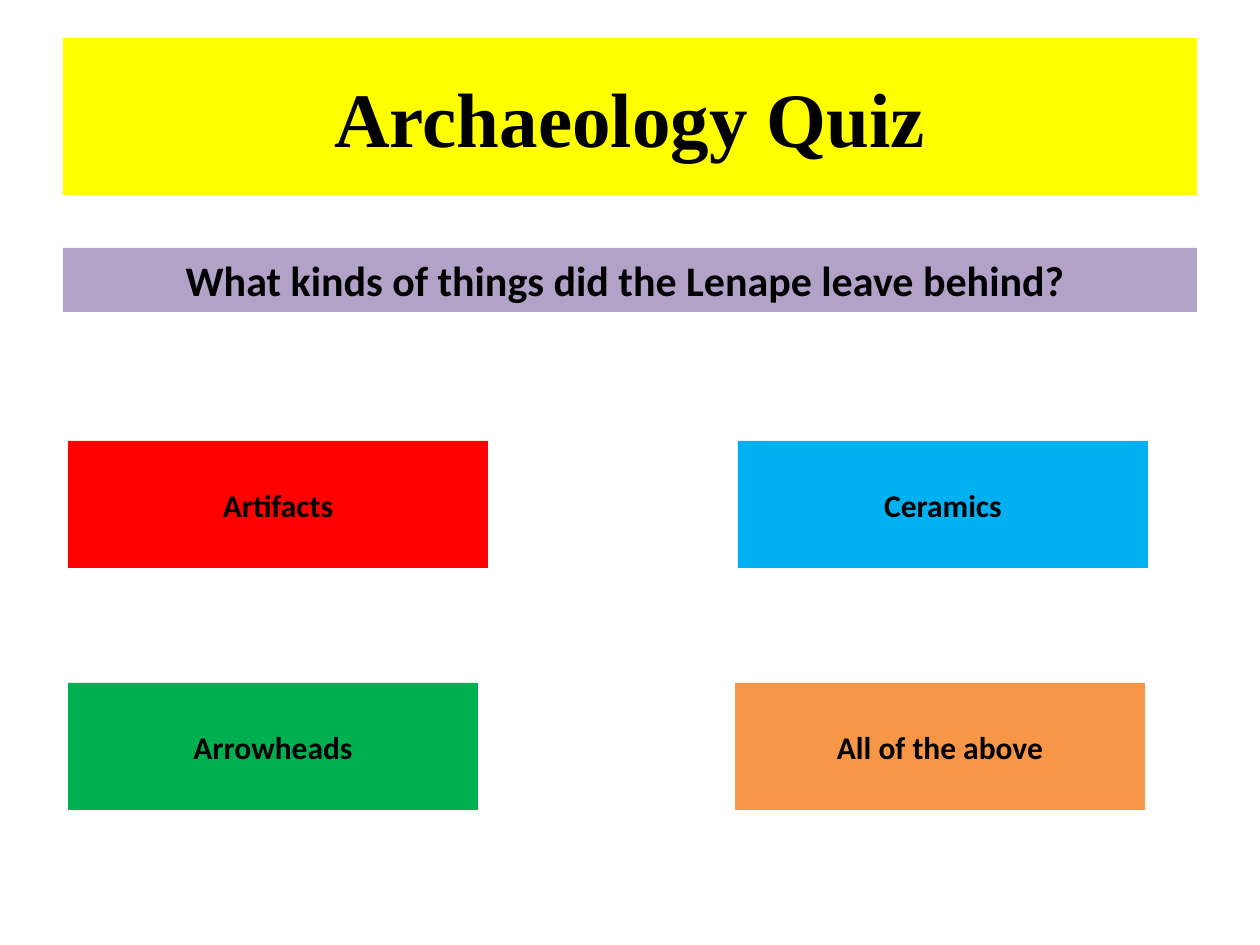
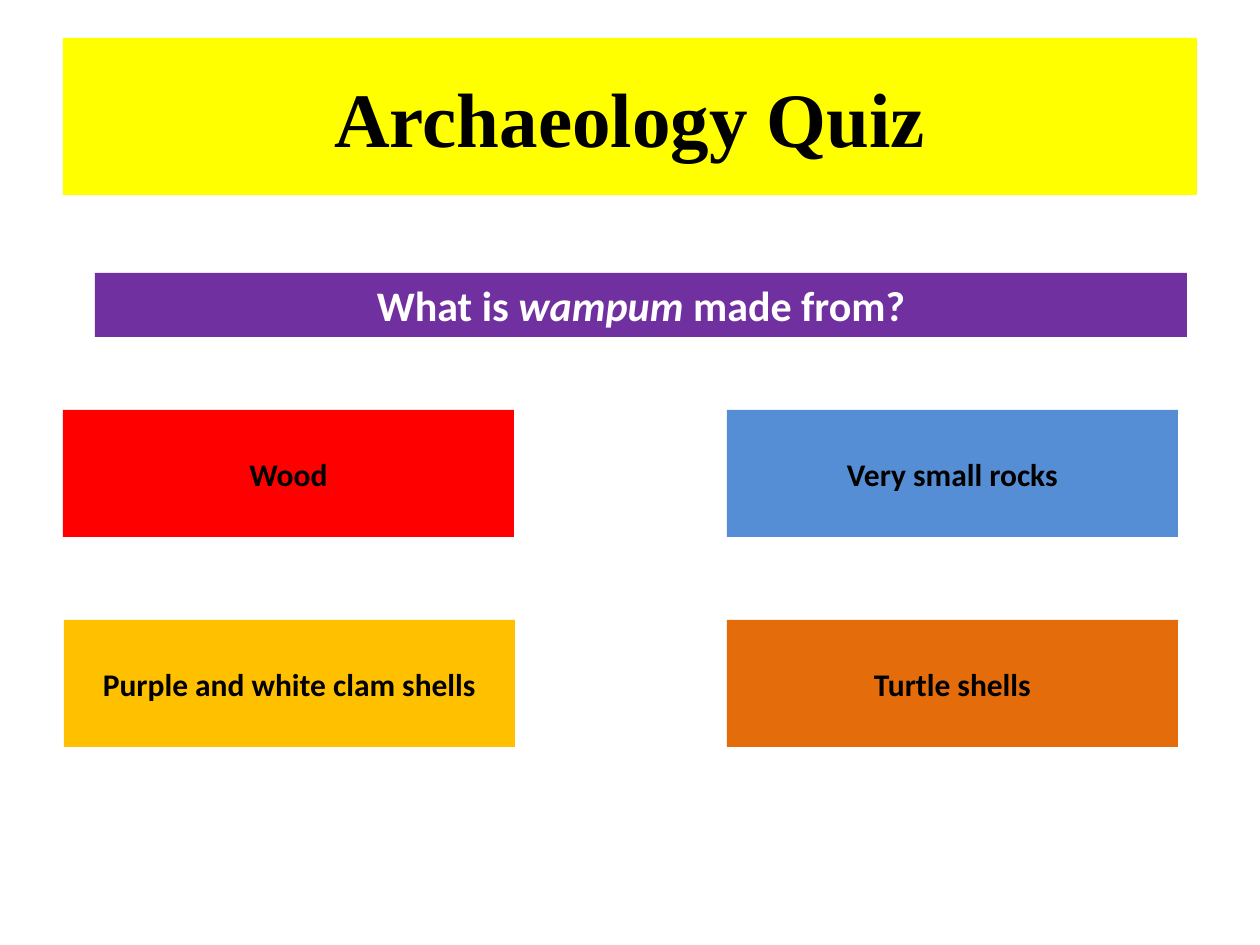
from pptx import Presentation
from pptx import util as u
from pptx.dml import color
from pptx.enum import shapes, text

PX = 914400 / 126
BLACK, WHITE, YELLOW, RED = "000000", "FFFFFF", "FFFF00", "FF0000"
TITLE_BOX = (63, 38, 1134, 157)
ANSWER_HEIGHT = 127

QUIZ = [
    {
        "question": ["What kinds of things did the Lenape leave behind? "],
        "italic": None,
        "box": (63, 248, 1134, 64),
        "fill": "B3A2C7",
        "ink": BLACK,
        "answers": [
            ("Artifacts", RED, 68, 441, 420),
            ("Ceramics", "00B0F0", 738, 441, 410),
            ("Arrowheads", "00B050", 68, 683, 410),
            ("All of the above", "F79646", 735, 683, 410),
        ],
    },
    {
        "question": ["What is ", "wampum", " made from?"],
        "italic": "wampum",
        "box": (95, 273, 1092, 64),
        "fill": "7030A0",
        "ink": WHITE,
        "answers": [
            ("Wood", RED, 63, 410, 451),
            ("Purple and white clam shells", "FFC000", 64, 620, 451),
            ("Very small rocks", "558ED5", 727, 410, 451),
            ("Turtle shells", "E46C0A", 727, 620, 451),
        ],
    },
]


def px(length):
    return u.Emu(round(length * PX))


def rgb(value):
    return color.RGBColor.from_string(value)


def add_panel(slide, box, fill, wording, size, ink=BLACK, font="Calibri", italic=None):
    panel = slide.shapes.add_shape(shapes.MSO_SHAPE.RECTANGLE, *map(px, box))
    panel.shadow.inherit = False
    panel.fill.solid()
    panel.fill.fore_color.rgb = rgb(fill)
    panel.line.fill.background()
    frame = panel.text_frame
    frame.word_wrap = True
    frame.vertical_anchor = text.MSO_ANCHOR.MIDDLE
    paragraph = frame.paragraphs[0]
    paragraph.alignment = text.PP_ALIGN.CENTER
    for part in wording:
        run = paragraph.add_run()
        run.text = part
        run.font.name = font
        run.font.size = u.Pt(size)
        run.font.bold = True
        run.font.italic = part == italic
        run.font.color.rgb = rgb(ink)


def add_title(slide):
    add_panel(slide, TITLE_BOX, YELLOW, ["Archaeology Quiz"], 44, font="Times New Roman")


def add_question(slide, item):
    add_panel(slide, item["box"], item["fill"], item["question"], 24,
              ink=item["ink"], italic=item["italic"])


def add_answer(slide, answer, fill, left, top, width):
    add_panel(slide, (left, top, width, ANSWER_HEIGHT), fill, [answer], 18)


def main():
    deck = Presentation()
    deck.slide_width, deck.slide_height = px(1260), px(945)
    for item in QUIZ:
        slide = deck.slides.add_slide(deck.slide_layouts[6])
        add_title(slide)
        add_question(slide, item)
        for answer in item["answers"]:
            add_answer(slide, *answer)
    deck.save("out.pptx")


if __name__ == "__main__":
    main()
